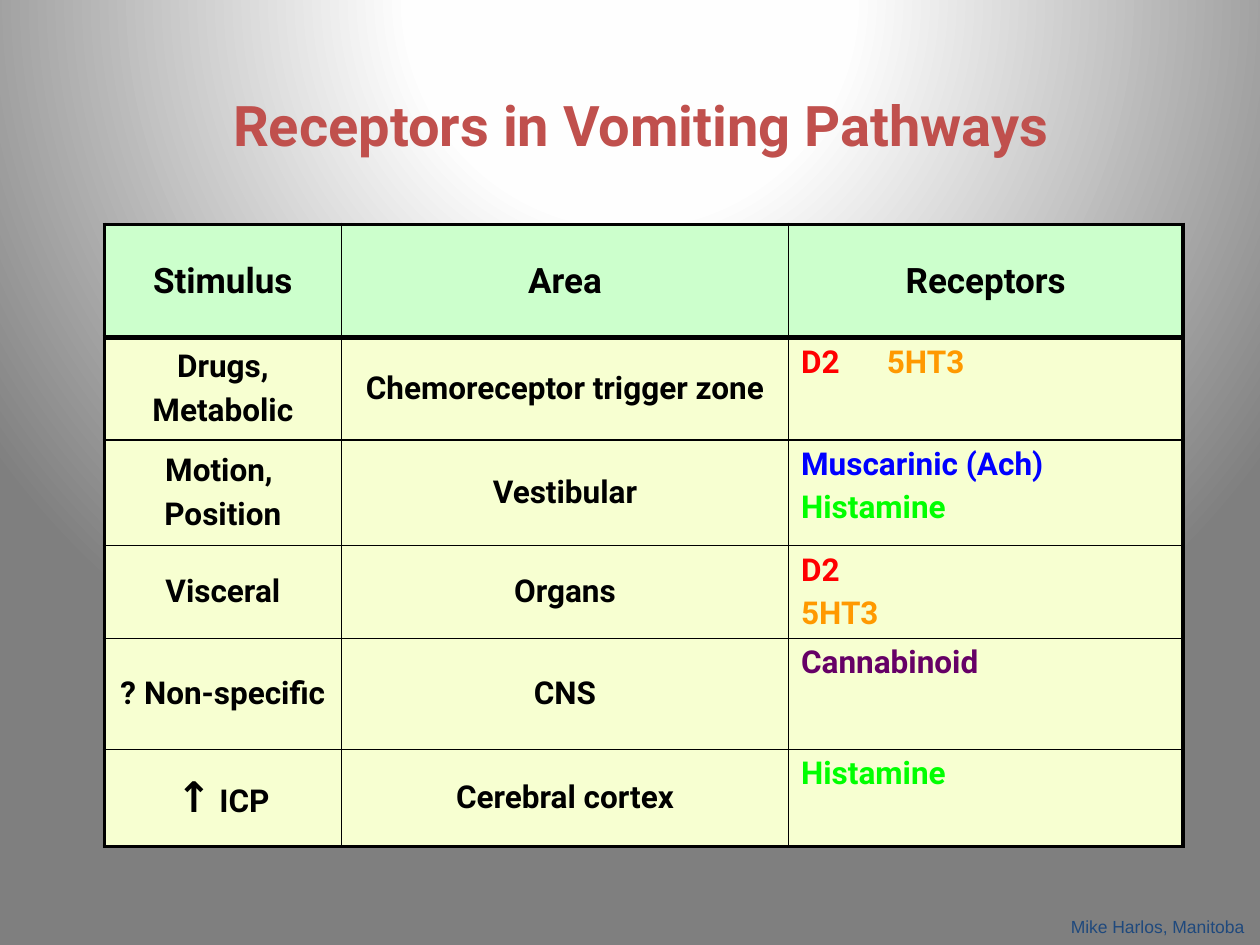
from typing import NamedTuple

from lxml.etree import SubElement
from pptx import Presentation
from pptx.dml.color import RGBColor
from pptx.enum.text import MSO_ANCHOR as Anchor, PP_ALIGN as Align
from pptx.oxml import parse_xml
from pptx.oxml.ns import nsdecls, qn
from pptx.util import Pt

BLACK = RGBColor(0x00, 0x00, 0x00)
RED = RGBColor(0xFF, 0x00, 0x00)
ORANGE = RGBColor(0xFF, 0x99, 0x00)
BLUE = RGBColor(0x00, 0x00, 0xFF)
GREEN = RGBColor(0x00, 0xFF, 0x00)
PURPLE = RGBColor(0x66, 0x00, 0x66)
TITLE_RED = RGBColor(0xC0, 0x50, 0x4D)
CREDIT_BLUE = RGBColor(0x1F, 0x49, 0x7D)
HEADER_FILL = RGBColor(0xCC, 0xFF, 0xCC)
BODY_FILL = RGBColor(0xF7, 0xFF, 0xD1)

HEADER_SIZE, BODY_SIZE, ARROW_SIZE = 20, 18, 24
OUTER, HEADER_RULE, INNER = Pt(2.25), Pt(3), Pt(1)
RECEPTOR_TAB = Pt(49)
COLUMN_WIDTHS = [135.5, 255.5, 225.5]
ROW_HEIGHTS = [64.8, 58.3, 60.5, 51.1, 63.4, 55.4]


class Piece(NamedTuple):
    text: str
    color: RGBColor = BLACK
    size: int = BODY_SIZE


class Pathway(NamedTuple):
    """One table row; each cell is a list of lines, each line a list of pieces."""
    stimulus: list[list[Piece]]
    area: list[list[Piece]]
    receptors: list[list[Piece]]


def lines(*texts: str, size: int = BODY_SIZE) -> list[list[Piece]]:
    return [[Piece(text, size=size)] for text in texts]


D2 = Piece("D2", RED)
SEROTONIN = Piece("5HT3", ORANGE)
HISTAMINE = Piece("Histamine", GREEN)

ROWS = [
    Pathway(*(lines(name, size=HEADER_SIZE) for name in ("Stimulus", "Area", "Receptors"))),
    Pathway(lines("Drugs,", "Metabolic"), lines("Chemoreceptor trigger zone"),
            [[D2, Piece("\t", RED), SEROTONIN]]),
    Pathway(lines("Motion, ", "Position"), lines("Vestibular"),
            [[Piece("Muscarinic (Ach)", BLUE)], [HISTAMINE]]),
    Pathway(lines("Visceral"), lines("Organs"), [[D2], [SEROTONIN]]),
    Pathway(lines("? Non-specific"), lines("CNS"), [[Piece("Cannabinoid", PURPLE)]]),
    Pathway([[Piece("↑", size=ARROW_SIZE), Piece(" ICP")]], lines("Cerebral cortex"),
            [[HISTAMINE]]),
]


def set_background(slide) -> None:
    """Circular gradient centred above the slide."""
    stops = "".join(f'<a:gs pos="{position}"><a:srgbClr val="{color}"/></a:gs>'
                    for position, color in ((0, "FFFFFF"), (28000, "FEFEFE"), (100000, "7F7F7F")))
    slide.background.fill.gradient()
    properties = slide.element.cSld.find(qn("p:bg")).find(qn("p:bgPr"))
    properties.replace(properties[0], parse_xml(
        f'<a:gradFill {nsdecls("a")} rotWithShape="1"><a:gsLst>{stops}</a:gsLst>'
        '<a:path path="circle"><a:fillToRect l="50000" t="-80000" r="50000" b="180000"/>'
        '</a:path></a:gradFill>'))


def set_borders(cell, row: int, column: int) -> None:
    last_row, last_column = len(ROW_HEIGHTS) - 1, len(COLUMN_WIDTHS) - 1
    widths = {
        "L": OUTER if column == 0 else INNER,
        "R": OUTER if column == last_column else INNER,
        "T": {0: OUTER, 1: HEADER_RULE}.get(row, INNER),
        "B": {0: HEADER_RULE, last_row: OUTER}.get(row, INNER),
    }
    properties = cell._tc.get_or_add_tcPr()
    for side, width in widths.items():
        line = SubElement(properties, qn(f"a:ln{side}"), w=str(width))
        SubElement(SubElement(line, qn("a:solidFill")), qn("a:srgbClr"), val=str(BLACK))


def fill_cell(cell, content: list[list[Piece]], row: int, column: int) -> None:
    set_borders(cell, row, column)
    cell.fill.solid()
    cell.fill.fore_color.rgb = HEADER_FILL if row == 0 else BODY_FILL
    is_receptor = row > 0 and column == 2
    cell.vertical_anchor = Anchor.TOP if is_receptor else Anchor.MIDDLE
    frame = cell.text_frame
    for index, pieces in enumerate(content):
        paragraph = frame.add_paragraph() if index else frame.paragraphs[0]
        paragraph.alignment = Align.LEFT if is_receptor else Align.CENTER
        paragraph.space_before = Pt(0.2 * pieces[0].size)
        paragraph.font.name = "Roboto"
        paragraph.font.bold = True
        if any(piece.text == "\t" for piece in pieces):
            tabs = parse_xml(f'<a:tabLst {nsdecls("a")}>'
                             f'<a:tab pos="{RECEPTOR_TAB}" algn="l"/></a:tabLst>')
            paragraph._p.get_or_add_pPr().find(qn("a:defRPr")).addprevious(tabs)
        for piece in pieces:
            run = paragraph.add_run()
            run.text = piece.text
            run.font.name = "Roboto"
            run.font.bold = True
            run.font.size = Pt(piece.size)
            run.font.color.rgb = piece.color


def add_receptor_table(slide) -> None:
    frame = slide.shapes.add_table(len(ROW_HEIGHTS), len(COLUMN_WIDTHS), Pt(59.6), Pt(128.2),
                                   Pt(sum(COLUMN_WIDTHS)), Pt(sum(ROW_HEIGHTS)))
    table = frame.table
    table.horz_banding = False
    for column, width in zip(table.columns, COLUMN_WIDTHS):
        column.width = Pt(width)
    for row, height in zip(table.rows, ROW_HEIGHTS):
        row.height = Pt(height)
    for row, pathway in enumerate(ROWS):
        for column, content in enumerate(pathway):
            fill_cell(table.cell(row, column), content, row, column)


def write_line(shape, text: str, font_name: str, size: int, color: RGBColor,
               alignment: Align, bold: bool = False) -> None:
    shape.text_frame.word_wrap = True
    shape.text_frame.text = text
    paragraph = shape.text_frame.paragraphs[0]
    paragraph.alignment = alignment
    # Format both the paragraph default and its only run
    for font in (paragraph.font, paragraph.runs[0].font):
        font.name = font_name
        font.size = Pt(size)
        font.bold = bold
        font.color.rgb = color


def main() -> None:
    presentation = Presentation()
    presentation.slide_width, presentation.slide_height = Pt(720), Pt(540)
    slide = presentation.slides.add_slide(presentation.slide_layouts[5])
    set_background(slide)

    # Title
    title = slide.shapes.title
    title.left, title.top, title.width, title.height = Pt(42.5), Pt(26), Pt(648), Pt(90)
    title.text_frame.vertical_anchor = Anchor.MIDDLE
    write_line(title, "Receptors in Vomiting Pathways", "Roboto", 32, TITLE_RED,
               Align.CENTER, bold=True)

    # Table of pathways
    add_receptor_table(slide)

    # Credit
    credit = slide.shapes.add_textbox(Pt(524), Pt(519.8), Pt(194), Pt(19.4))
    write_line(credit, "Mike Harlos, Manitoba", "Arial", 10, CREDIT_BLUE, Align.RIGHT)

    presentation.save("out.pptx")


if __name__ == "__main__":
    main()
